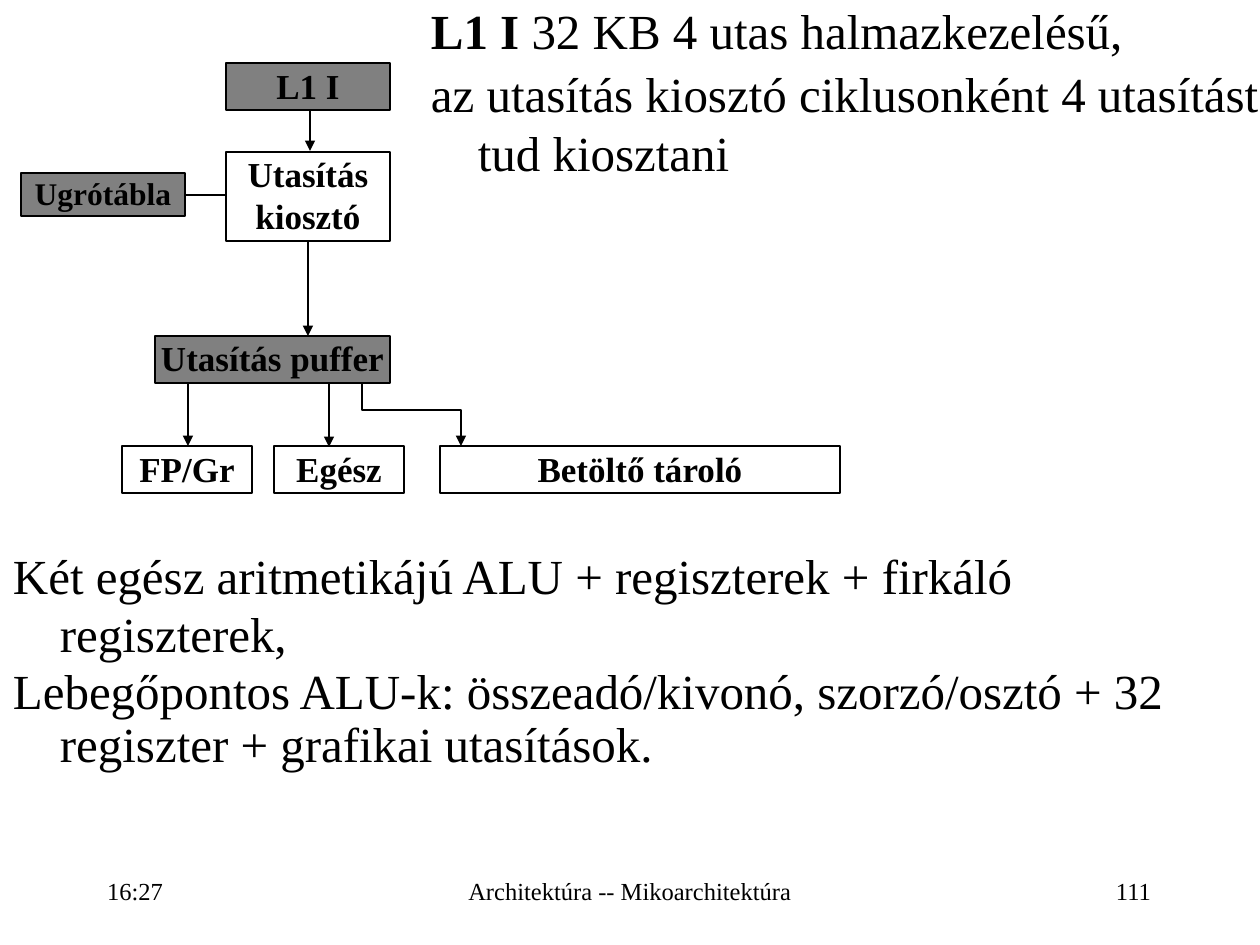
from dataclasses import dataclass
from typing import Optional

from lxml.etree import SubElement
from pptx import Presentation
from pptx.dml.color import RGBColor
from pptx.enum.shapes import MSO_CONNECTOR, MSO_SHAPE
from pptx.enum.text import MSO_ANCHOR, PP_ALIGN
from pptx.oxml.ns import qn
from pptx.util import Emu, Pt

SCALE = 914400 / 126
FONT = "Times New Roman"
COLOURS = {"ink": "000000", "storage": "808080"}


@dataclass
class Unit:
    label: str
    left: int
    top: int
    width: int
    height: int = 47
    fill: Optional[str] = None
    size: int = 20


@dataclass
class Link:
    points: list[tuple[int, int]]
    arrow: bool = True


@dataclass
class Line:
    text: str
    spacing: float = 1.0
    bold_lead: str = ""


@dataclass
class Note:
    left: int
    top: int
    width: int
    height: int
    lines: list[Line]
    insets: tuple[int, int] = (13, 6)
    size: int = 28
    hanging: int = 0
    align: PP_ALIGN = PP_ALIGN.LEFT
    anchor: MSO_ANCHOR = MSO_ANCHOR.TOP


UNITS = [
    Unit("L1 I", 226, 63, 164, fill="storage"),
    Unit("Ugrótábla", 21, 173, 164, 43, "storage", 18),
    Unit("Utasítás kiosztó", 226, 152, 164, 89),
    Unit("Utasítás puffer", 155, 336, 235, fill="storage"),
    Unit("FP/Gr", 122, 446, 130),
    Unit("Egész", 274, 446, 130),
    Unit("Betöltő tároló", 440, 446, 400),
]

LINKS = [
    Link([(185, 195), (225, 195)], arrow=False),
    Link([(188, 383), (188, 446)]),
    Link([(329, 383), (329, 447)]),
    Link([(362, 383), (362, 410), (461, 410), (461, 446)]),
    Link([(308, 241), (308, 336)]),
    Link([(310, 111), (310, 151)]),
]

FOOTER = {"size": 14, "anchor": MSO_ANCHOR.MIDDLE}
NOTES = [
    Note(431, 0, 829, 296, [
        Line("L1 I 32 KB 4 utas halmazkezelésű,", bold_lead="L1 I"),
        Line("az utasítás kiosztó ciklusonként 4 utasítást tud kiosztani"),
    ], insets=(0, 0), hanging=47),
    Note(0, 539, 1227, 284, [
        Line("Két egész aritmetikájú ALU + regiszterek + firkáló regiszterek,"),
        Line("Lebegőpontos ALU-k: összeadó/kivonó, szorzó/osztó + 32 "
             "regiszter + grafikai utasítások.", 0.9),
    ], hanging=47),
    Note(94, 858, 261, 68, [Line("16:27", 0.93)], **FOOTER),
    Note(431, 861, 398, 62, [Line("Architektúra -- Mikoarchitektúra", 0.93)],
         align=PP_ALIGN.CENTER, **FOOTER),
    Note(903, 861, 261, 62, [Line("111", 0.93)], align=PP_ALIGN.RIGHT, **FOOTER),
]


def px(length: int) -> Emu:
    return Emu(round(length * SCALE))


def colour(name: str) -> RGBColor:
    return RGBColor.from_string(COLOURS[name])


def style_span(span, size: int, bold: bool = False) -> None:
    span.font.name = FONT
    span.font.size = Pt(size)
    span.font.bold = bold
    span.font.color.rgb = colour("ink")


def set_insets(frame, across: int, down: int) -> None:
    frame.margin_left = frame.margin_right = px(across)
    frame.margin_top = frame.margin_bottom = px(down)


def draw_unit(page, unit: Unit) -> None:
    box = page.shapes.add_shape(MSO_SHAPE.RECTANGLE, px(unit.left), px(unit.top),
                                px(unit.width), px(unit.height))
    box.shadow.inherit = False
    if unit.fill:
        box.fill.solid()
        box.fill.fore_color.rgb = colour(unit.fill)
    else:
        box.fill.background()
    box.line.color.rgb = colour("ink")
    box.line.width = Pt(1)
    frame = box.text_frame
    frame.text = unit.label
    frame.word_wrap = True
    frame.vertical_anchor = MSO_ANCHOR.TOP
    set_insets(frame, 0, 1)
    para = frame.paragraphs[0]
    para.alignment = PP_ALIGN.CENTER
    style_span(para.runs[0], unit.size, True)


def draw_link(page, link: Link) -> None:
    points = [(px(x), px(y)) for x, y in link.points]
    if len(points) == 2:
        wire = page.shapes.add_connector(MSO_CONNECTOR.STRAIGHT, *points[0], *points[1])
    else:
        builder = page.shapes.build_freeform(*points[0])
        builder.add_line_segments(points[1:], close=False)
        wire = builder.convert_to_shape()
        wire.fill.background()
    wire.line.color.rgb = colour("ink")
    wire.line.width = Pt(1.5)
    properties = wire.line._get_or_add_ln()
    if link.arrow:
        SubElement(properties, qn("a:tailEnd"), type="triangle")
    SubElement(properties.getparent(), qn("a:effectLst"))


def draw_note(page, note: Note) -> None:
    box = page.shapes.add_textbox(px(note.left), px(note.top),
                                  px(note.width), px(note.height))
    frame = box.text_frame
    frame.word_wrap = True
    frame.vertical_anchor = note.anchor
    set_insets(frame, *note.insets)
    frame.text = "\n".join(line.text for line in note.lines)
    for para, line in zip(frame.paragraphs, note.lines):
        para.alignment = note.align
        para.line_spacing = line.spacing
        if note.hanging:
            para.space_before = Pt(note.size / 10)
            indents = para._p.get_or_add_pPr()
            indents.set("marL", str(px(note.hanging)))
            indents.set("indent", str(-px(note.hanging)))
        if line.bold_lead:
            para.text = line.bold_lead
            para.add_run().text = line.text.removeprefix(line.bold_lead)
        for span in para.runs:
            style_span(span, note.size, span.text == line.bold_lead)


def main() -> None:
    deck = Presentation()
    deck.slide_width, deck.slide_height = px(1260), px(945)
    page = deck.slides.add_slide(deck.slide_layouts[6])
    for unit in UNITS:
        draw_unit(page, unit)
    for link in LINKS:
        draw_link(page, link)
    for note in NOTES:
        draw_note(page, note)
    deck.save("out.pptx")


if __name__ == "__main__":
    main()
